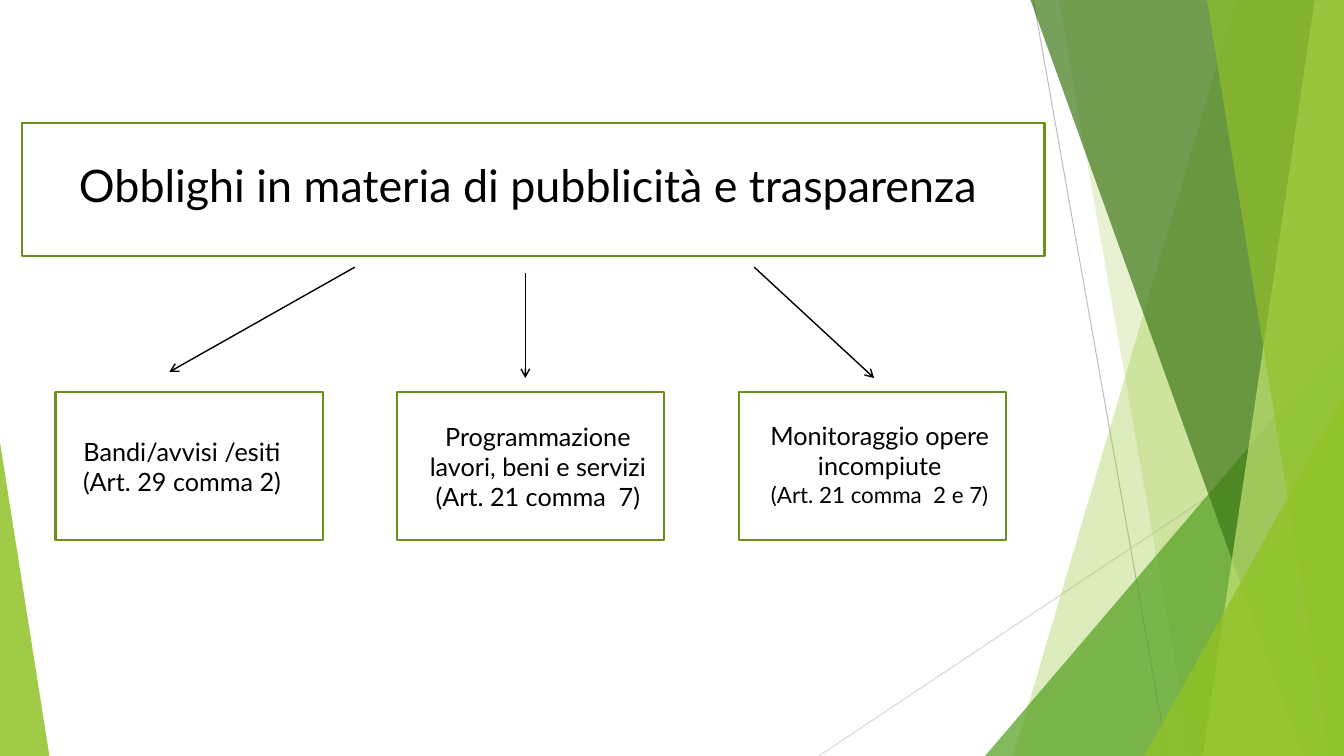
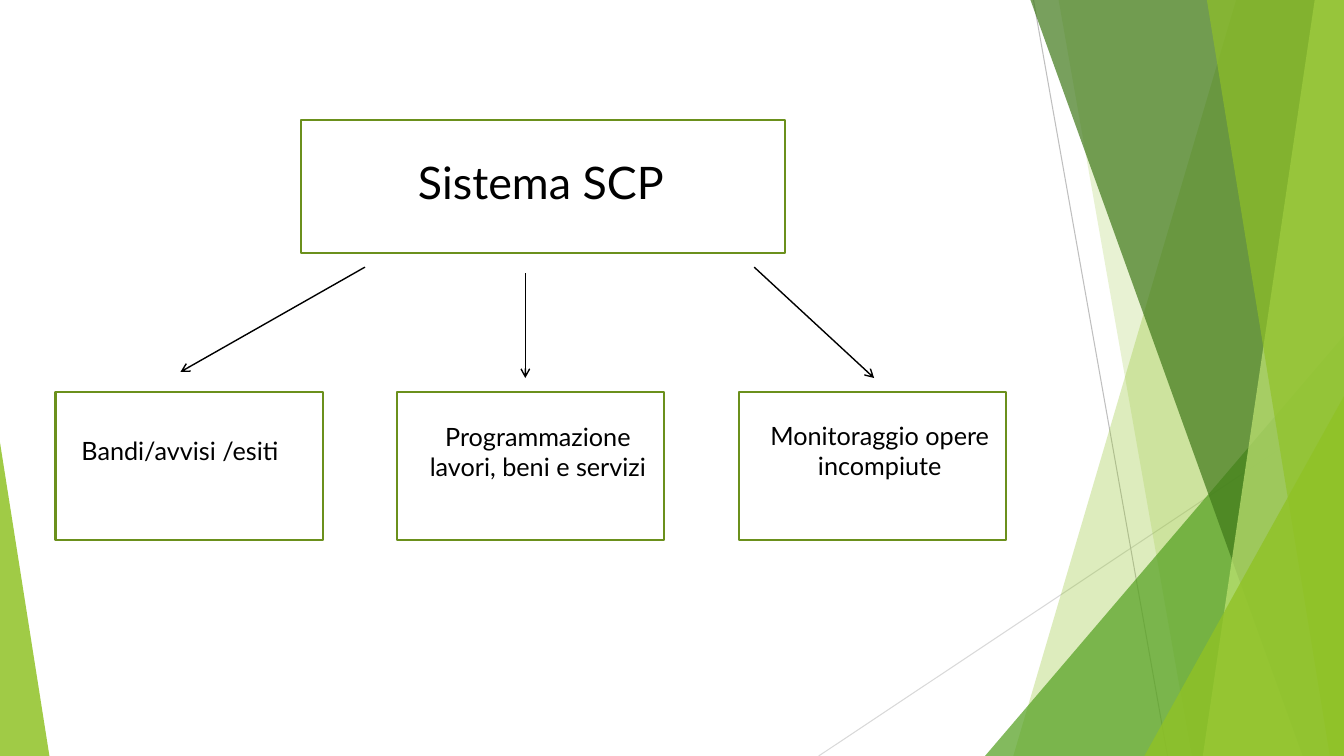
from lxml import etree
from pptx import Presentation
from pptx import util as u
from pptx.dml.color import RGBColor
from pptx.enum import shapes, text
from pptx.oxml import ns

SCALE = 9144
WIDTH, HEIGHT = 1333, 750
FONT = "Lato"
COLORS = {
    "ink": "000000",
    "frame": "6B901C",
    "pale_line": "D9D9D9",
    "grey_line": "BFBFBF",
    "lime": "90C226",
    "light": "C0E474",
    "green": "54A021",
    "dark": "3F7819",
}
RAYS = [
    ("pale_line", (812, HEIGHT), (WIDTH, 403)),
    ("grey_line", (1025, 0), (1158, HEIGHT)),
]
FACETS = [
    ("lime", 30, [(1226, 0), (1005, HEIGHT), (WIDTH, HEIGHT), (WIDTH, 0)]),
    ("lime", 20, [(1050, 0), (1182, HEIGHT), (WIDTH, HEIGHT), (WIDTH, 0)]),
    ("green", 72, [(977, HEIGHT), (WIDTH, 333), (WIDTH, HEIGHT)]),
    ("dark", 70, [(1022, 0), (1292, HEIGHT), (WIDTH, HEIGHT), (WIDTH, 0)]),
    ("light", 70, [(1304, 0), (1193, HEIGHT), (WIDTH, HEIGHT), (WIDTH, 0)]),
    ("lime", 65, [(1197, 0), (1319, HEIGHT), (WIDTH, HEIGHT), (WIDTH, 0)]),
    ("lime", 80, [(1135, HEIGHT), (WIDTH, 393), (WIDTH, HEIGHT)]),
    ("lime", 85, [(0, 439), (49, HEIGHT), (0, HEIGHT)]),
]
TOPIC_LEFT, TOPIC_TOP, TOPIC_STEP = 55, 389, 339
TOPIC_WIDTH, TOPIC_HEIGHT = 265, 147


def px(value):
    return u.Emu(value * SCALE)


def color(name):
    return RGBColor.from_string(COLORS[name])


def add_line(page, start, end, color_name, points, arrow=False):
    line = page.shapes.add_connector(
        shapes.MSO_CONNECTOR.STRAIGHT, *map(px, start + end))
    line.line.color.rgb = color(color_name)
    line.line.width = u.Pt(points)
    if arrow:
        outline = line.line._get_or_add_ln()
        etree.SubElement(outline, ns.qn("a:tailEnd"), type="arrow")
    etree.SubElement(line._element.spPr, ns.qn("a:effectLst"))


def add_facet(page, color_name, opacity, points):
    builder = page.shapes.build_freeform(*points[0], scale=SCALE)
    builder.add_line_segments(points[1:], close=True)
    facet = builder.convert_to_shape()
    facet.shadow.inherit = False
    facet.fill.solid()
    facet.fill.fore_color.rgb = color(color_name)
    facet.line.fill.background()
    fill_color = facet._element.spPr.find(
        f"{ns.qn('a:solidFill')}/{ns.qn('a:srgbClr')}")
    etree.SubElement(fill_color, ns.qn("a:alpha"), val=str(opacity * 1000))


def add_frame(page, *bounds):
    frame = page.shapes.add_shape(
        shapes.MSO_SHAPE.RECTANGLE, *map(px, bounds))
    frame.shadow.inherit = False
    frame.fill.background()
    frame.line.color.rgb = color("frame")
    frame.line.width = u.Pt(1.5)


def add_text(page, bounds, lines):
    box = page.shapes.add_textbox(*map(px, bounds))
    frame = box.text_frame
    frame.word_wrap = True
    frame.auto_size = text.MSO_AUTO_SIZE.SHAPE_TO_FIT_TEXT
    for index, (words, size) in enumerate(lines):
        para = frame.add_paragraph() if index else frame.paragraphs[0]
        para.alignment = text.PP_ALIGN.CENTER
        span = para.add_run()
        span.text = words
        span.font.name = FONT
        span.font.size = u.Pt(size)
        span.font.color.rgb = color("ink")


def add_backdrop(page):
    for color_name, start, end in RAYS:
        add_line(page, start, end, color_name, 0.75)
    for color_name, opacity, points in FACETS:
        add_facet(page, color_name, opacity, points)


def add_tree_page(deck, title, title_frame, title_text, left_arrow, topics):
    page = deck.slides.add_slide(deck.slide_layouts[6])
    add_backdrop(page)
    arrows = [left_arrow, ((521, 271), (521, 375)), ((748, 265), (867, 375))]
    for start, end in arrows:
        add_line(page, start, end, "ink", 1, arrow=True)
    add_frame(page, *title_frame)
    add_text(page, title_text, [(title, 32)])
    for column, (bounds, lines) in enumerate(topics):
        left = TOPIC_LEFT + column * TOPIC_STEP
        add_frame(page, left, TOPIC_TOP, TOPIC_WIDTH, TOPIC_HEIGHT)
        text_left, text_top, text_height = bounds
        add_text(page, (text_left, text_top, TOPIC_WIDTH, text_height), lines)


def main():
    deck = Presentation()
    deck.slide_width, deck.slide_height = px(WIDTH), px(HEIGHT)
    notices = ("Bandi/avvisi /esiti", 18)
    planning = ("Programmazione lavori, beni e servizi", 18)
    monitoring = ("Monitoraggio opere incompiute", 18)
    add_tree_page(
        deck, "Obblighi in materia di pubblicità e trasparenza",
        (22, 122, 1014, 132), (43, 152, 962, 64), ((352, 265), (168, 369)),
        [((48, 428, 101), [notices, ("(Art. 29 comma 2)", 18)]),
         ((401, 413, 131), [planning, ("(Art. 21 comma  7)", 18)]),
         ((740, 412, 101), [monitoring, ("(Art. 21 comma  2 e 7)", 16)])])
    add_tree_page(
        deck, "Sistema SCP",
        (299, 119, 480, 132), (309, 149, 455, 64), ((362, 265), (179, 369)),
        [((46, 427, 71), [notices]),
         ((401, 413, 71), [planning]),
         ((740, 412, 71), [monitoring])])
    deck.save("out.pptx")


if __name__ == "__main__":
    main()
